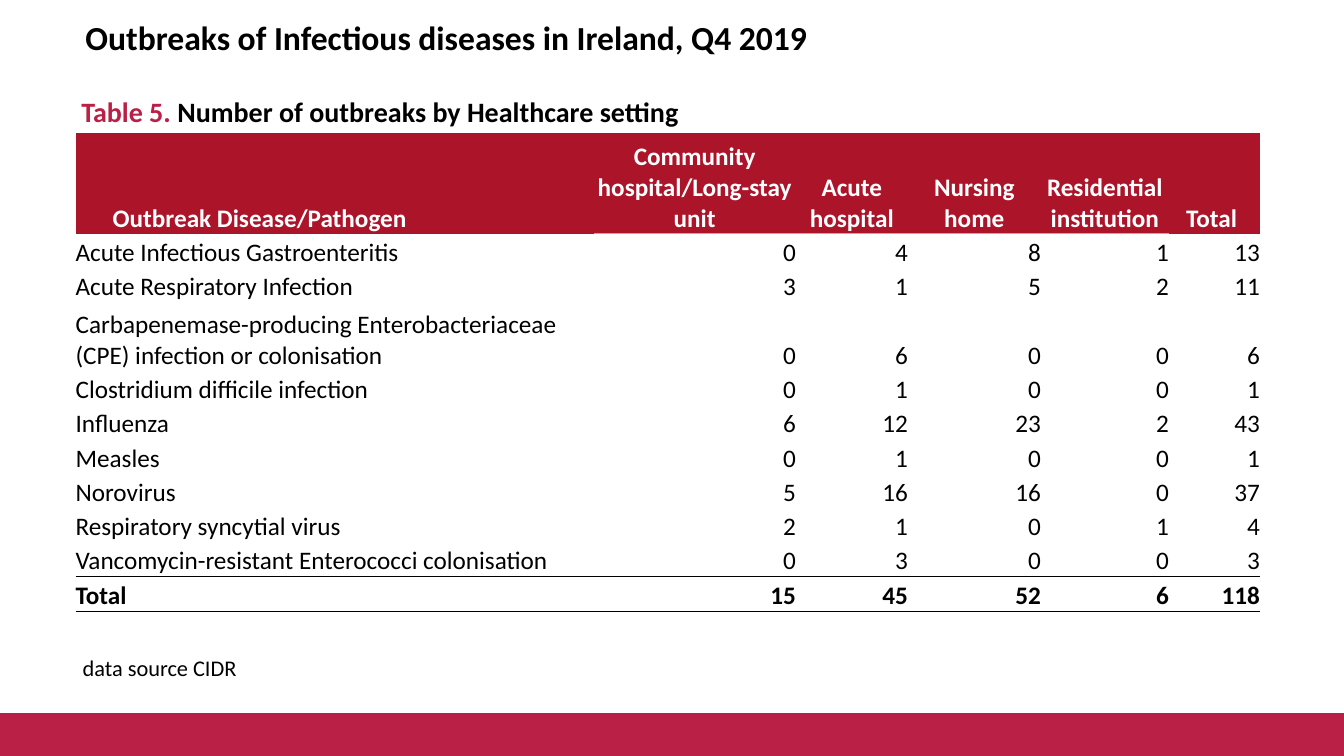
import pptx
import pptx.util
import pptx.dml.color
import pptx.enum.text
import pptx.enum.shapes
import pptx.oxml
import pptx.oxml.ns

Pt = pptx.util.Pt
RGB = pptx.dml.color.RGBColor
ALIGN = pptx.enum.text.PP_ALIGN

BLACK = RGB(0x00, 0x00, 0x00)
WHITE = RGB(0xFF, 0xFF, 0xFF)
ROSE = RGB(0xBA, 0x1F, 0x46)
RED = RGB(0xAC, 0x14, 0x2A)
BLUE = RGB(0x95, 0xB3, 0xD7)

deck = pptx.Presentation()
deck.slide_width, deck.slide_height = Pt(960), Pt(540)
slide = deck.slides.add_slide(deck.slide_layouts[6])


def add_text(box, size, bold, runs, wrap=True):
    frame = slide.shapes.add_textbox(*map(Pt, box)).text_frame
    frame.word_wrap = wrap
    para = frame.paragraphs[0]
    para.font.name, para.font.size, para.font.bold = "Calibri", Pt(size), bold
    for text, color in runs:
        run = para.add_run()
        run.text = text
        run.font.color.rgb = color


def add_edge(cell, side, color):
    edge = pptx.oxml.parse_xml(
        f'<a:{side} {pptx.oxml.ns.nsdecls("a")} w="{Pt(0.5)}">'
        f'<a:solidFill><a:srgbClr val="{color}"/></a:solidFill></a:{side}>')
    cell._tc.get_or_add_tcPr().insert(0, edge)


# Bottom band
band = slide.shapes.add_shape(
    pptx.enum.shapes.MSO_SHAPE.RECTANGLE, 0, Pt(510), Pt(960), Pt(30))
band.shadow.inherit = False
band.fill.solid()
band.fill.fore_color.rgb = ROSE
band.line.color.rgb = ROSE
band.line.width = Pt(2)

# Title, caption and data source
add_text((54, 8.5, 714, 58), 24, True,
         [("Outbreaks of Infectious diseases in Ireland, Q4 2019", BLACK)])
add_text((51, 64, 446, 32), 20, True,
         [("Table 5.", ROSE),
          (" Number of outbreaks by Healthcare setting", BLACK)], wrap=False)
add_text((52, 464, 480, 40), 16, False, [("data source CIDR", BLACK)])

# Outbreak counts
rows = [
    ("Outbreak Disease/Pathogen", "Community hospital/Long-stay unit",
     "Acute hospital", "Nursing home", "Residential institution", "Total"),
    ("Acute Infectious Gastroenteritis", 0, 4, 8, 1, 13),
    ("Acute Respiratory Infection", 3, 1, 5, 2, 11),
    ("Carbapenemase-producing Enterobacteriaceae (CPE) infection or "
     "colonisation", 0, 6, 0, 0, 6),
    ("Clostridium difficile infection", 0, 1, 0, 0, 1),
    ("Influenza", 6, 12, 23, 2, 43),
    ("Measles", 0, 1, 0, 0, 1),
    ("Norovirus", 5, 16, 16, 0, 37),
    ("Respiratory syncytial virus", 2, 1, 0, 1, 4),
    ("Vancomycin-resistant Enterococci colonisation", 0, 3, 0, 0, 3),
    ("Total", 15, 45, 52, 6, 118),
]
widths = [370, 144.5, 80, 95, 91.5, 65]
heights = [72, 24.5, 24.5, 49] + [24.5] * 7
last = len(rows) - 1

table = slide.shapes.add_table(
    len(rows), len(widths), Pt(54), Pt(95),
    Pt(sum(widths)), Pt(sum(heights))).table
table.horz_banding = False
# Plain style without grid lines
style = table._tbl.tblPr.find(pptx.oxml.ns.qn("a:tableStyleId"))
style.text = "{2D5ABB26-0587-4C30-8999-92F81FD0307C}"
for col, width in zip(table.columns, widths):
    col.width = Pt(width)
for row, height in zip(table.rows, heights):
    row.height = Pt(height)

for r, row in enumerate(rows):
    for c, value in enumerate(row):
        cell = table.cell(r, c)
        cell.margin_left = cell.margin_right = 0
        cell.margin_top = cell.margin_bottom = 0
        cell.vertical_anchor = pptx.enum.text.MSO_ANCHOR.BOTTOM
        cell.text = str(value)
        para = cell.text_frame.paragraphs[0]
        para.font.name, para.font.size = "Calibri", Pt(18)
        para.font.bold = r in (0, last)
        para.font.color.rgb = BLACK if r else WHITE
        if c == 0:
            para.alignment = ALIGN.LEFT
        else:
            para.alignment = ALIGN.RIGHT if r else ALIGN.CENTER
        if r == 0:
            cell.fill.solid()
            cell.fill.fore_color.rgb = RED
            if 0 < c < len(widths) - 1:
                add_edge(cell, "lnB", BLUE)
        else:
            cell.fill.background()
        if r >= last - 1:
            add_edge(cell, "lnB", BLACK)
        if r == last:
            add_edge(cell, "lnT", BLACK)

# Header offsets at both ends
table.cell(0, 0).margin_left = Pt(26.5)
table.cell(0, 5).margin_right = Pt(4)

deck.save("out.pptx")
